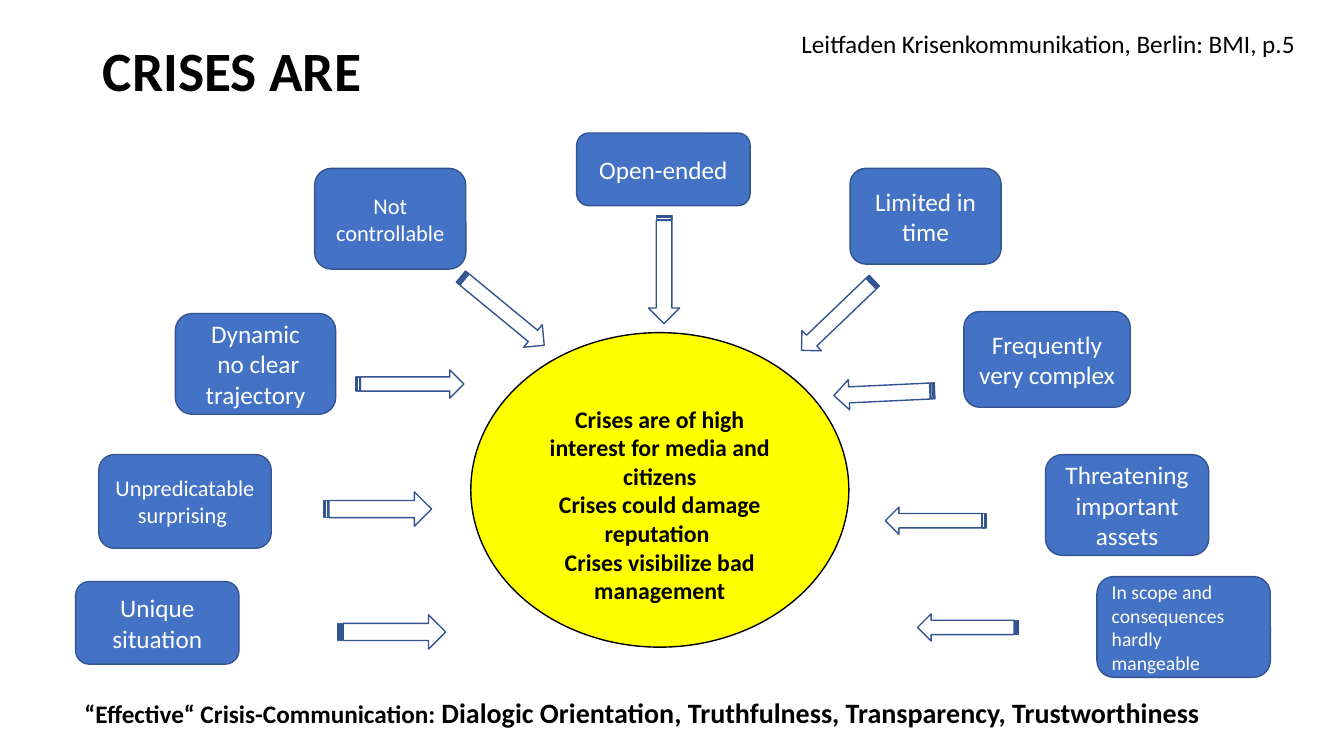
from pptx import Presentation, util as u
from pptx.dml.color import RGBColor
from pptx.enum import shapes, text

WIDTH, HEIGHT = u.Inches(13.33), u.Inches(7.5)
BLACK = RGBColor(0, 0, 0)
WHITE = RGBColor(255, 255, 255)
YELLOW = RGBColor(255, 255, 0)
BLUE = RGBColor(0x44, 0x72, 0xC4)
NAVY = RGBColor(0x32, 0x54, 0x91)

LEFT, CENTER = text.PP_ALIGN.LEFT, text.PP_ALIGN.CENTER

TRAITS = [
    ((5.63, 76.93, 12.15, 10.93), ["Unique situation"], 18, CENTER),
    ((7.35, 60.13, 12.83, 12.4), ["Unpredicatable\vsurprising "], 16, CENTER),
    ((13.05, 41.47, 11.93, 13.33), ["Dynamic", " no clear trajectory"], 18, CENTER),
    ((23.41, 22.27, 11.25, 13.33), ["Not controllable"], 16, CENTER),
    ((42.91, 17.6, 12.9, 9.6), ["Open-ended"], 18, CENTER),
    ((63.24, 22.27, 11.25, 12.67), ["Limited in time"], 18, CENTER),
    ((71.72, 41.2, 12.38, 12.67), ["Frequently very complex"], 18, CENTER),
    ((77.79, 60.13, 12.15, 13.33), ["Threatening important assets"], 18, CENTER),
    ((81.62, 76.27, 12.9, 13.33), ["In scope and consequences hardly\vmangeable"], 14, LEFT),
]

ARROWS = [
    ((24.08, 65.07, 8.03, 4.53), 0, 0.5),
    ((25.13, 81.33, 8.03, 4.53), 0, 0.5),
    ((26.48, 48.93, 8.03, 3.73), 0, 0.5),
    ((33.38, 39.2, 8.03, 3.87), 39.5, 0.5),
    ((45.39, 33.6, 8.03, 4.13), 90, 0.5),
    ((58.59, 39.87, 7.5, 3.73), 136.2, 0.53),
    ((62.04, 50, 7.5, 4), 177.3, 0.53),
    ((65.87, 67.07, 7.5, 3.6), 180, 0.53),
    ((68.27, 81.2, 7.5, 3.6), 180, 0.53),
]

CORE = [
    "Crises are of high interest for media and citizens",
    "Crises could damage reputation ",
    "Crises visibilize bad management",
]


def place(box):
    """Turn a box in percent of the slide into lengths."""
    left, top, width, height = box
    return (int(WIDTH * left / 100), int(HEIGHT * top / 100),
            int(WIDTH * width / 100), int(HEIGHT * height / 100))


def add_run(paragraph, words, size, color=BLACK, bold=False):
    """Add words to a paragraph, breaking the line at each vertical tab."""
    for index, line in enumerate(words.split("\v")):
        if index:
            paragraph.add_line_break()
        run = paragraph.add_run()
        run.text = line
        run.font.name = "Calibri"
        run.font.size = u.Pt(size)
        run.font.bold = bold
        run.font.color.rgb = color


def write(frame, lines, size, color, bold=False, align=CENTER):
    """Write one paragraph per line into a text frame."""
    frame.word_wrap = True
    for index, line in enumerate(lines):
        paragraph = frame.add_paragraph() if index else frame.paragraphs[0]
        paragraph.alignment = align
        add_run(paragraph, line, size, color, bold)


def add_outlined(slide, kind, box, line, fill=None):
    """Add a flat preset shape with a thin outline."""
    outlined = slide.shapes.add_shape(kind, *place(box))
    outlined.shadow.inherit = False
    outlined.line.color.rgb = line
    outlined.line.width = u.Pt(1)
    if fill is None:
        outlined.fill.background()
    else:
        outlined.fill.solid()
        outlined.fill.fore_color.rgb = fill
    return outlined


def add_heading(slide, box):
    """Format the title placeholder."""
    heading = slide.shapes.title
    heading.left, heading.top, heading.width, heading.height = place(box)
    frame = heading.text_frame
    frame.auto_size = text.MSO_AUTO_SIZE.NONE
    frame.vertical_anchor = text.MSO_ANCHOR.MIDDLE
    write(frame, ["CRISES ARE"], 39.6, BLACK, True, LEFT)
    frame.paragraphs[0].line_spacing = 0.9


def add_core(slide, box):
    """Add the central ellipse with its statements."""
    core = add_outlined(slide, shapes.MSO_SHAPE.OVAL, box, BLACK, YELLOW)
    core.text_frame.margin_top = int(HEIGHT * 0.045)
    write(core.text_frame, CORE, 17, BLACK, True)


def add_trait(slide, box, lines, size, align):
    """Add one rounded box naming a trait of crises."""
    trait = add_outlined(slide, shapes.MSO_SHAPE.ROUNDED_RECTANGLE, box, NAVY, BLUE)
    write(trait.text_frame, lines, size, WHITE, align=align)


def add_arrow(slide, box, angle, shaft):
    """Add one striped arrow turned towards the ellipse."""
    arrow = add_outlined(slide, shapes.MSO_SHAPE.STRIPED_RIGHT_ARROW, box, NAVY)
    arrow.adjustments[0] = shaft
    arrow.rotation = angle


def add_note(slide, box, parts):
    """Add a line of text made of (words, size, bold) parts."""
    frame = slide.shapes.add_textbox(*place(box)).text_frame
    frame.word_wrap = True
    for words, size, bold in parts:
        add_run(frame.paragraphs[0], words, size, bold=bold)


def main():
    """Build the slide and save it."""
    deck = Presentation()
    deck.slide_width, deck.slide_height = WIDTH, HEIGHT
    slide = deck.slides.add_slide(deck.slide_layouts[5])
    add_heading(slide, (6.9, 5.33, 86.27, 8.93))
    add_core(slide, (35.03, 44, 28.13, 41.6))
    for trait in TRAITS:
        add_trait(slide, *trait)
    for arrow in ARROWS:
        add_arrow(slide, *arrow)
    add_note(slide, (5.55, 91.33, 88.9, 5.87), [
        ("“Effective“ Crisis-Communication: ", 18, True),
        ("Dialogic Orientation, Truthfulness, Transparency, Trustworthiness", 20, True),
    ])
    add_note(slide, (58.89, 3.07, 39.68, 5.33), [
        ("Leitfaden Krisenkommunikation, Berlin: BMI, p.5", 18, False),
    ])
    deck.save("out.pptx")


if __name__ == "__main__":
    main()
